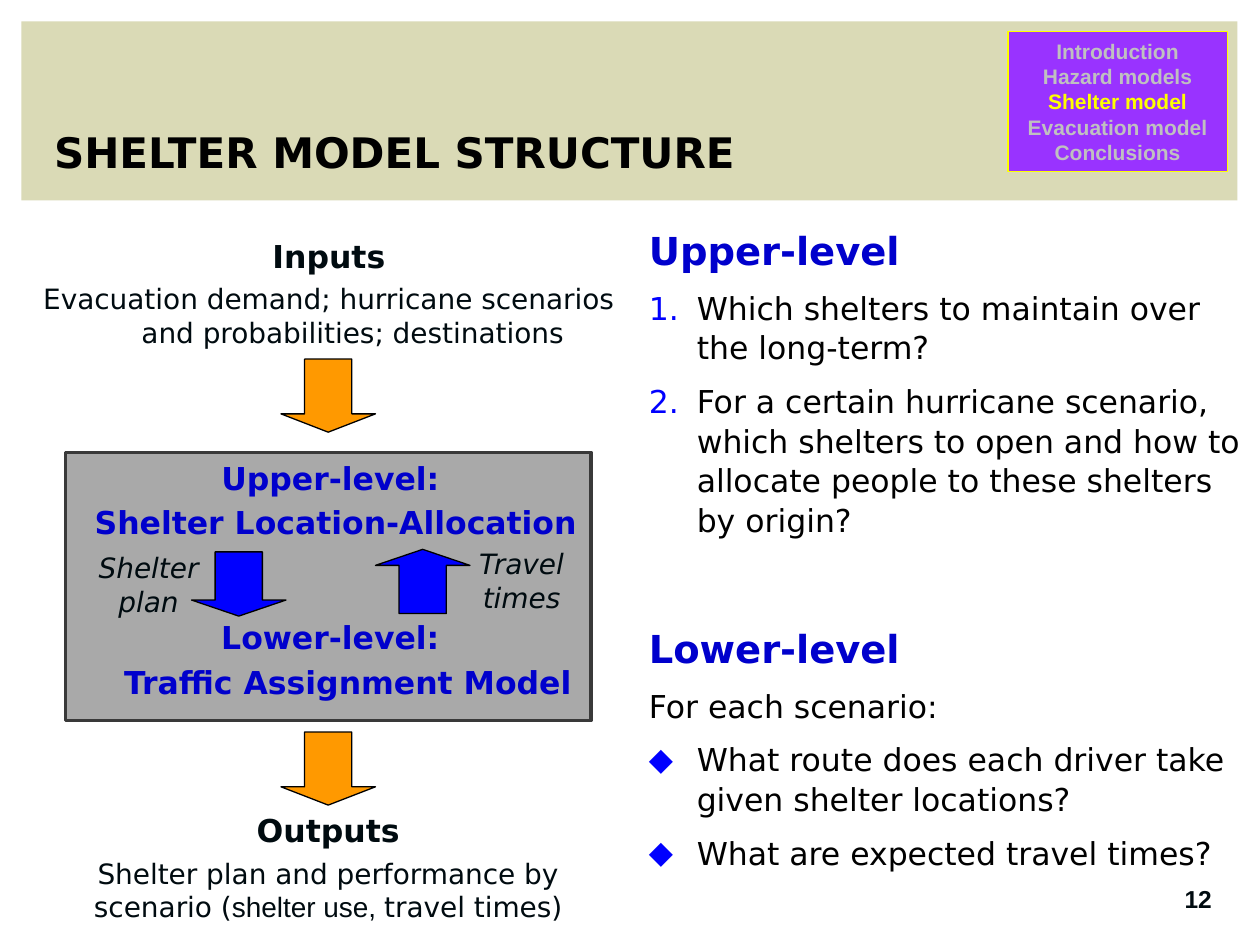
import pptx
import pptx.dml.color
import pptx.enum.shapes
import pptx.enum.text
import pptx.oxml
import pptx.oxml.ns
import pptx.util
from pptx.util import Inches

COLORS = {
    "band": "DADAB6", "ink": "000B10", "black": "000000", "heading": "0000CC",
    "blue": "0000FF", "orange": "FF9900", "gray": "4D4D4D", "frame": "393939",
    "purple": "9933FF", "yellow": "FFFF00", "silver": "C0C0C0",
}
SANS = "DejaVu Sans"
SHAPE = pptx.enum.shapes.MSO_SHAPE
ALIGN = pptx.enum.text.PP_ALIGN
ANCHOR = pptx.enum.text.MSO_ANCHOR
HANGING = (0.38, -0.38)
NUMBER = '<a:buAutoNum {} type="arabicPeriod"/>'
DIAMOND = '<a:buChar {} char="◆"/>'


def color(name):
    return pptx.dml.color.RGBColor.from_string(COLORS[name])


def xml(template):
    return pptx.oxml.parse_xml(template.format(pptx.oxml.ns.nsdecls("a")))


def add_shape(slide, kind, left, top, width, height, fill, line=None, line_width=0.75):
    shape = slide.shapes.add_shape(
        kind, Inches(left), Inches(top), Inches(width), Inches(height))
    shape.shadow.inherit = False
    shape.fill.solid()
    shape.fill.fore_color.rgb = color(fill)
    if line:
        shape.line.color.rgb = color(line)
        shape.line.width = pptx.util.Pt(line_width)
    else:
        shape.line.fill.background()
    return shape


def add_arrow(slide, kind, left, top, height, fill):
    arrow = add_shape(slide, kind, left, top, 0.75, height, fill, "black")
    arrow.adjustments[0] = 0.5
    arrow.adjustments[1] = 0.25


def set_transparency(shape, opacity):
    fill_color = shape.fill._xPr.find(".//" + pptx.oxml.ns.qn("a:srgbClr"))
    fill_color.append(xml(f'<a:alpha {{}} val="{opacity * 1000}"/>'))


def add_text_box(slide, left, top, width, height, margins=None, anchor=ANCHOR.TOP):
    """Return the text frame of a new wrapping text box."""
    box = slide.shapes.add_textbox(
        Inches(left), Inches(top), Inches(width), Inches(height))
    frame = box.text_frame
    frame.word_wrap = True
    frame.vertical_anchor = anchor
    if margins is not None:
        frame.margin_left = frame.margin_right = Inches(margins)
        frame.margin_top = frame.margin_bottom = Inches(margins)
    return frame


def add_run(paragraph, text, font=SANS, size=18, ink="ink", bold=False, italic=False):
    run = paragraph.add_run()
    run.text = text
    run.font.name = font
    run.font.size = pptx.util.Pt(size)
    run.font.color.rgb = color(ink)
    run.font.bold = bold
    run.font.italic = italic


def add_paragraph(frame, text, align=ALIGN.CENTER, indent=(0, 0), bullet=None,
                  before=4, spacing=None, **font_format):
    """Fill the empty first paragraph of the frame, or append one with space before."""
    first = frame.paragraphs[0]
    paragraph = frame.add_paragraph() if first.runs else first
    properties = paragraph._p.get_or_add_pPr()
    if bullet:
        properties.append(xml(f'<a:buClr {{}}><a:srgbClr val="{COLORS["blue"]}"/></a:buClr>'))
        properties.append(xml(f'<a:buFont {{}} typeface="{SANS}"/>'))
        properties.append(xml(bullet))
    if any(indent):
        properties.set("marL", str(Inches(indent[0])))
        properties.set("indent", str(Inches(indent[1])))
    paragraph.alignment = align
    if paragraph is not first:
        paragraph.space_before = pptx.util.Pt(before)
    if spacing:
        paragraph.line_spacing = spacing
    add_run(paragraph, text, **font_format)
    return paragraph


def add_question_list(slide, top, height, heading, bullet, questions, intro=None):
    frame = add_text_box(slide, 5.15, top, 4.78, height, margins=0)
    layout = dict(align=ALIGN.LEFT, before=8, spacing=1.05)
    add_paragraph(frame, heading, size=22, ink="heading", bold=True, **layout)
    if intro:
        add_paragraph(frame, intro, ink="black", **layout)
    for question in questions:
        add_paragraph(frame, question, indent=HANGING, bullet=bullet, ink="black", **layout)


def add_header(slide):
    add_shape(slide, SHAPE.RECTANGLE, 0.17, 0.17, 9.65, 1.42, "band")
    title = add_text_box(slide, 0.43, 0.29, 9.07, 1.11, margins=0, anchor=ANCHOR.BOTTOM)
    add_paragraph(title, "SHELTER MODEL STRUCTURE", align=ALIGN.LEFT, spacing=1.04,
                  size=24, ink="black", bold=True)

    menu = add_shape(slide, SHAPE.RECTANGLE, 8, 0.25, 1.74, 1.11, "purple", "yellow")
    menu.text_frame.word_wrap = True
    current = "Shelter model"
    for section in ("Introduction", "Hazard models", current, "Evacuation model", "Conclusions"):
        add_paragraph(menu.text_frame, section, before=0, font="Arial", size=12, bold=True,
                      ink="yellow" if section == current else "silver")


def add_model_diagram(slide):
    model = add_shape(slide, SHAPE.RECTANGLE, 0.52, 3.59, 4.17, 2.13, "gray", "frame", 2)
    set_transparency(model, 48)

    inputs = add_text_box(slide, 0.17, 1.83, 4.88, 1.02)
    add_paragraph(inputs, "Inputs", indent=HANGING, bold=True)
    add_paragraph(inputs, "Evacuation demand; hurricane scenarios and probabilities; destinations",
                  indent=HANGING, size=16)

    outputs = add_text_box(slide, 0.23, 6.39, 4.75, 0.91)
    add_paragraph(outputs, "Outputs", bold=True)
    summary = add_paragraph(outputs, "Shelter plan and performance by scenario (", size=16)
    add_run(summary, "shelter use, ", font="Arial", size=16)
    add_run(summary, "travel times)", size=16)

    levels = (
        (3.59, 0.77, "Upper-level: ", "Shelter Location-Allocation", HANGING),
        (4.86, 0.86, "Lower-level: ", "Traffic Assignment Model", (0.19, 0)),
    )
    for top, height, level, name, indent in levels:
        frame = add_text_box(slide, 0.29, top, 4.75, height)
        add_paragraph(frame, level, ink="heading", bold=True)
        add_paragraph(frame, name, indent=indent, ink="heading", bold=True)

    for top in (2.85, 5.81):
        add_arrow(slide, SHAPE.DOWN_ARROW, 2.23, top, 0.58, "orange")
    add_arrow(slide, SHAPE.DOWN_ARROW, 1.52, 4.38, 0.51, "blue")
    add_arrow(slide, SHAPE.UP_ARROW, 2.98, 4.36, 0.51, "blue")
    for left, top, label in ((0.65, 4.32, "Shelter plan"), (3.61, 4.29, "Travel times")):
        add_paragraph(add_text_box(slide, left, top, 1.06, 0.74), label, size=16, italic=True)


def main():
    presentation = pptx.Presentation()
    presentation.slide_width = Inches(10)
    presentation.slide_height = Inches(7.5)
    slide = presentation.slides.add_slide(presentation.slide_layouts[6])

    add_header(slide)
    add_model_diagram(slide)
    add_question_list(slide, 1.78, 2.59, "Upper-level", NUMBER, (
        "Which shelters to maintain over the long-term?",
        "For a certain hurricane scenario, which shelters to open and how to "
        "allocate people to these shelters by origin?",
    ))
    add_question_list(slide, 4.94, 1.67, "Lower-level", DIAMOND, (
        "What route does each driver take given shelter locations?",
        "What are expected travel times?",
    ), intro="For each scenario:")
    page_number = add_text_box(slide, 9.05, 6.88, 0.92, 0.5, margins=0.04, anchor=ANCHOR.MIDDLE)
    add_paragraph(page_number, "12", font="Arial", size=14, bold=True)

    presentation.save("out.pptx")


if __name__ == "__main__":
    main()
